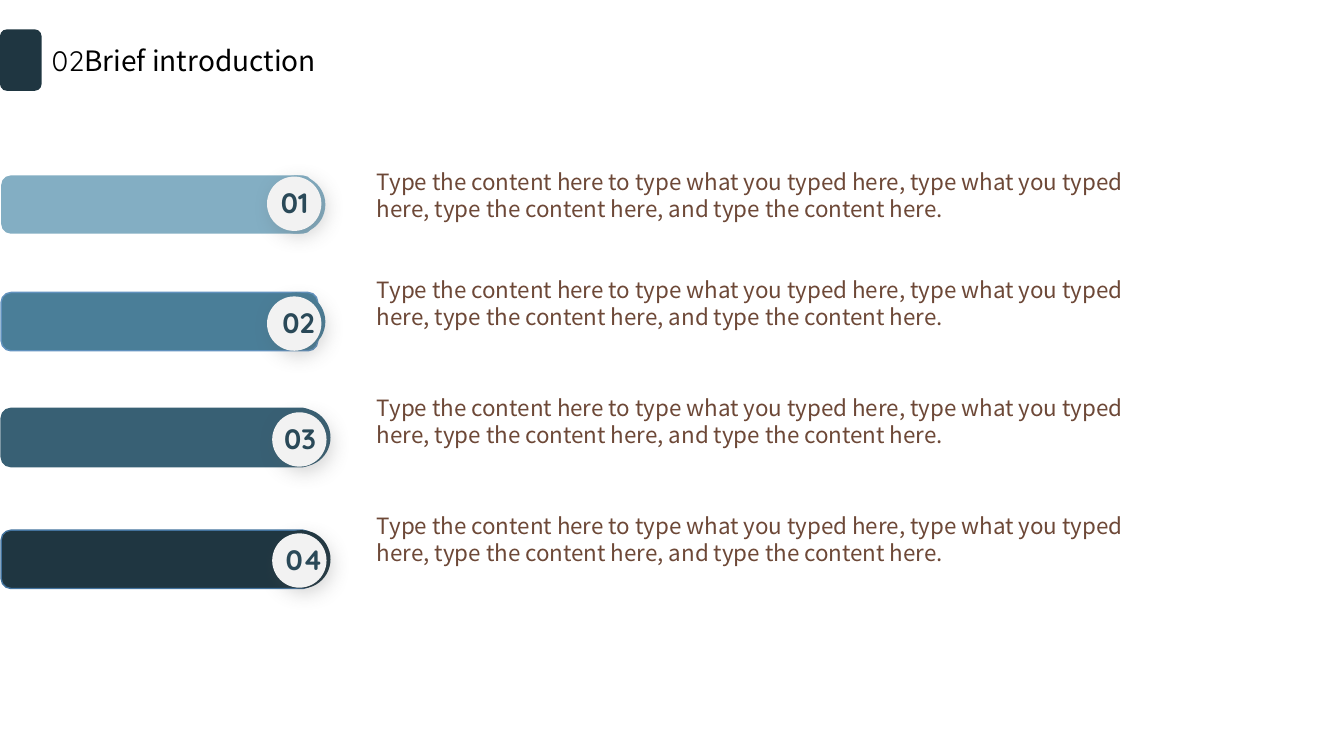
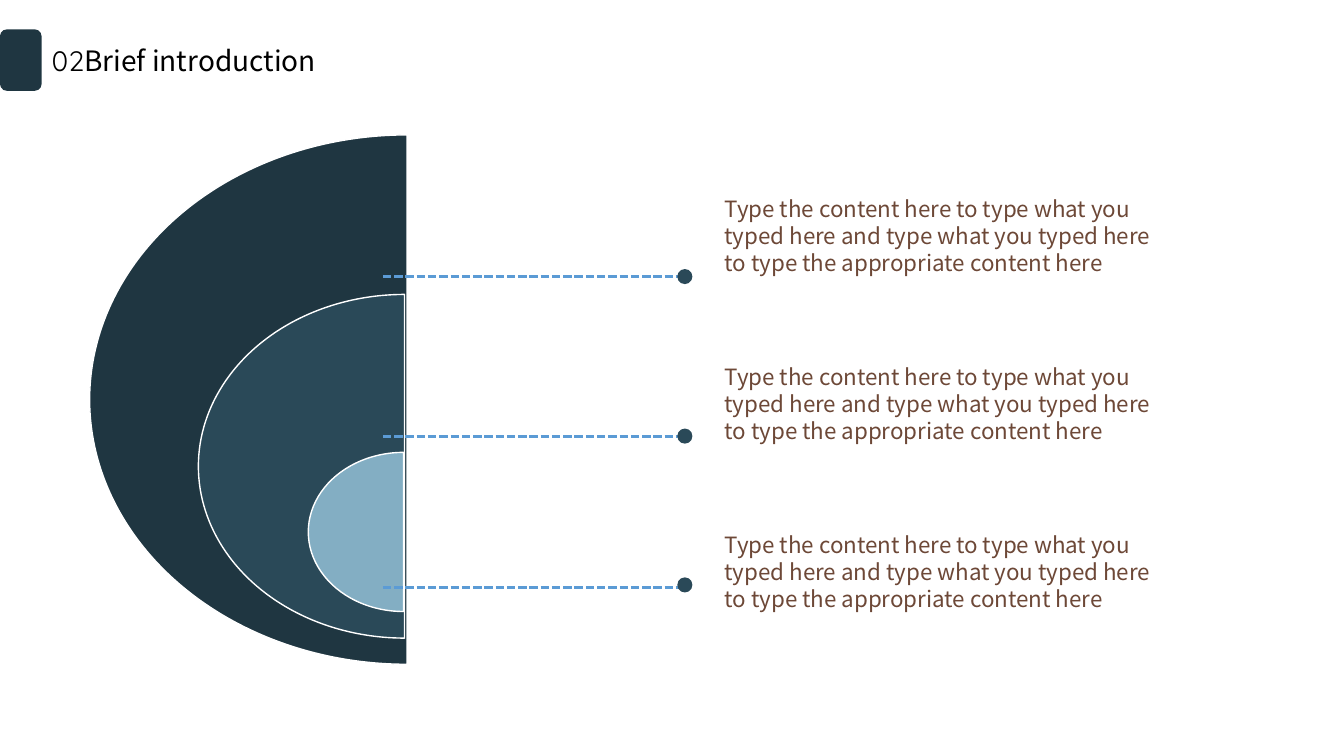
from collections import namedtuple

from lxml import etree
from pptx import Presentation
from pptx.dml.color import RGBColor
from pptx.enum import dml, shapes, text
from pptx.oxml.ns import qn
from pptx.util import Cm, Pt

NAVY = RGBColor(0x1F, 0x36, 0x41)
DEEP = RGBColor(0x2A, 0x49, 0x58)
TEAL = RGBColor(0x38, 0x60, 0x74)
STEEL = RGBColor(0x4A, 0x7E, 0x98)
SKY = RGBColor(0x83, 0xAE, 0xC3)
STEEL_EDGE = RGBColor(0x62, 0x92, 0xBE)
NAVY_EDGE = RGBColor(0x43, 0x73, 0x9E)
DASH_BLUE = RGBColor(0x5B, 0x9B, 0xD5)
BROWN = RGBColor(0x6D, 0x48, 0x37)
PALE = RGBColor(0xF2, 0xF2, 0xF2)
WHITE = RGBColor(0xFF, 0xFF, 0xFF)
BLACK = RGBColor(0, 0, 0)

NUMBER_FONT = "Quicksand"
TEXT_FONT = "Noto Sans CJK SC"
TITLE_ONLY = 5

BAR_TEXT = ("Type the content here to type what you typed here, type what you typed here, "
            "type the content here, and type the content here.")
LAYER_TEXT = ("Type the content here to type what you typed here and type what you typed here "
              "to type the appropriate content here")

Bar = namedtuple("Bar", "fill edge top width disc_left knob_top text_top")
BARS = [
    Bar(SKY, None, 4.42, 7.85, 6.73, 4.45, 4.11),
    Bar(STEEL, STEEL_EDGE, 7.37, 7.98, 6.73, 7.47, 6.83),
    Bar(TEAL, TEAL, 10.29, 7.85, 6.86, 10.39, 9.8),
    Bar(NAVY, NAVY_EDGE, 13.36, 7.85, 6.86, 13.44, 12.78),
]
BAR_HEIGHT = 1.47
KNOB_SIZE = 1.37

# left, top, width, height, fill
LAYERS = [
    (2.26, 3.4, 16, 13.34, NAVY),
    (5, 7.42, 10.39, 8.66, DEEP),
    (7.77, 11.4, 4.8, 4.01, SKY),
]
# line height, dot top
POINTERS = [(6.96, 6.78), (11, 10.8), (14.81, 14.55)]
DOT_SIZE = 0.38


def add_filled(slide, kind, left, top, width, height, fill, edge=None):
    shape = slide.shapes.add_shape(kind, Cm(left), Cm(top), Cm(width), Cm(height))
    shape.shadow.inherit = False
    shape.fill.solid()
    shape.fill.fore_color.rgb = fill
    if edge is None:
        shape.line.fill.background()
    else:
        shape.line.color.rgb = edge
        shape.line.width = Pt(1)
    return shape


def add_run(paragraph, words, font_name, size, color, bold=False):
    run = paragraph.add_run()
    run.text = words
    run.font.name = font_name
    run.font.size = Pt(size)
    run.font.color.rgb = color
    run.font.bold = bold


def add_text(slide, left, top, width, height, words, font_name, size, color, bold=False):
    box = slide.shapes.add_textbox(Cm(left), Cm(top), Cm(width), Cm(height))
    box.text_frame.word_wrap = True
    add_run(box.text_frame.paragraphs[0], words, font_name, size, color, bold)


def add_soft_shadow(shape):
    """Give the shape a blurred grey shadow towards the lower right."""
    effects = shape._element.spPr.find(qn("a:effectLst"))
    shadow = etree.SubElement(effects, qn("a:outerShdw"), blurRad=str(Pt(14)),
                              dist=str(Pt(5)), dir="2700000", algn="tl", rotWithShape="0")
    color = etree.SubElement(shadow, qn("a:srgbClr"), val="595959")
    etree.SubElement(color, qn("a:alpha"), val="25000")


def add_dashed_line(slide, left, right, height):
    line = slide.shapes.add_connector(shapes.MSO_CONNECTOR.STRAIGHT,
                                      Cm(left), Cm(height), Cm(right), Cm(height))
    line.line.color.rgb = DASH_BLUE
    line.line.width = Pt(2)
    line.line.dash_style = dml.MSO_LINE.SQUARE_DOT
    etree.SubElement(line._element.spPr, qn("a:effectLst"))


def add_content_slide(presentation):
    """Add a slide with the shared side tab and section title."""
    slide = presentation.slides.add_slide(presentation.slide_layouts[TITLE_ONLY])
    add_filled(slide, shapes.MSO_SHAPE.ROUNDED_RECTANGLE, 0, 0.74, 1.05, 1.55, NAVY)
    title = slide.shapes.title
    title.left, title.top, title.width, title.height = Cm(1.05), Cm(0.97), Cm(10.9), Cm(1.11)
    frame = title.text_frame
    frame.vertical_anchor = text.MSO_ANCHOR.TOP
    frame.auto_size = text.MSO_AUTO_SIZE.NONE
    paragraph = frame.paragraphs[0]
    paragraph.alignment = text.PP_ALIGN.LEFT
    add_run(paragraph, "02", NUMBER_FONT, 20, BLACK)
    add_run(paragraph, "Brief introduction", TEXT_FONT, 20, BLACK)
    return slide


def add_numbered_bar(slide, index, bar):
    add_filled(slide, shapes.MSO_SHAPE.ROUNDED_RECTANGLE, 0.03, bar.top,
               bar.width, BAR_HEIGHT, bar.fill, bar.edge)
    add_filled(slide, shapes.MSO_SHAPE.FLOWCHART_CONNECTOR, bar.disc_left, bar.top,
               BAR_HEIGHT, BAR_HEIGHT, bar.fill)
    knob = add_filled(slide, shapes.MSO_SHAPE.OVAL, bar.disc_left, bar.knob_top,
                      KNOB_SIZE, KNOB_SIZE, PALE)
    add_soft_shadow(knob)
    add_text(slide, 6.83 + 0.04 * index, bar.knob_top + 0.1, 1.9, 1.11,
             f"{index + 1:02}", NUMBER_FONT, 20, DEEP, bold=True)
    add_text(slide, 9.25, bar.text_top, 20.35, 1.62, BAR_TEXT, TEXT_FONT, 16, BROWN)


def add_half_disc(slide, left, top, width, height, fill):
    pie = add_filled(slide, shapes.MSO_SHAPE.PIE, left, top, width, height, fill, WHITE)
    # Angles in units of 100000/60000 degrees: from 90 to 270 degrees
    pie.adjustments[0] = 54
    pie.adjustments[1] = 162


def build_bars_slide(presentation):
    slide = add_content_slide(presentation)
    for index, bar in enumerate(BARS):
        add_numbered_bar(slide, index, bar)


def build_layers_slide(presentation):
    slide = add_content_slide(presentation)
    for layer in LAYERS:
        add_half_disc(slide, *layer)
    for index, (line_height, dot_top) in enumerate(POINTERS):
        add_dashed_line(slide, 9.65, 17.22, line_height)
        add_filled(slide, shapes.MSO_SHAPE.FLOWCHART_CONNECTOR, 17.07, dot_top,
                   DOT_SIZE, DOT_SIZE, DEEP)
        add_text(slide, 18.01, 4.8 + 4.23 * index, 11.43, 2.31,
                 LAYER_TEXT, TEXT_FONT, 16, BROWN)


def main():
    presentation = Presentation()
    presentation.slide_width = Cm(33.87)
    presentation.slide_height = Cm(19.05)
    build_bars_slide(presentation)
    build_layers_slide(presentation)
    presentation.save("out.pptx")


if __name__ == "__main__":
    main()
